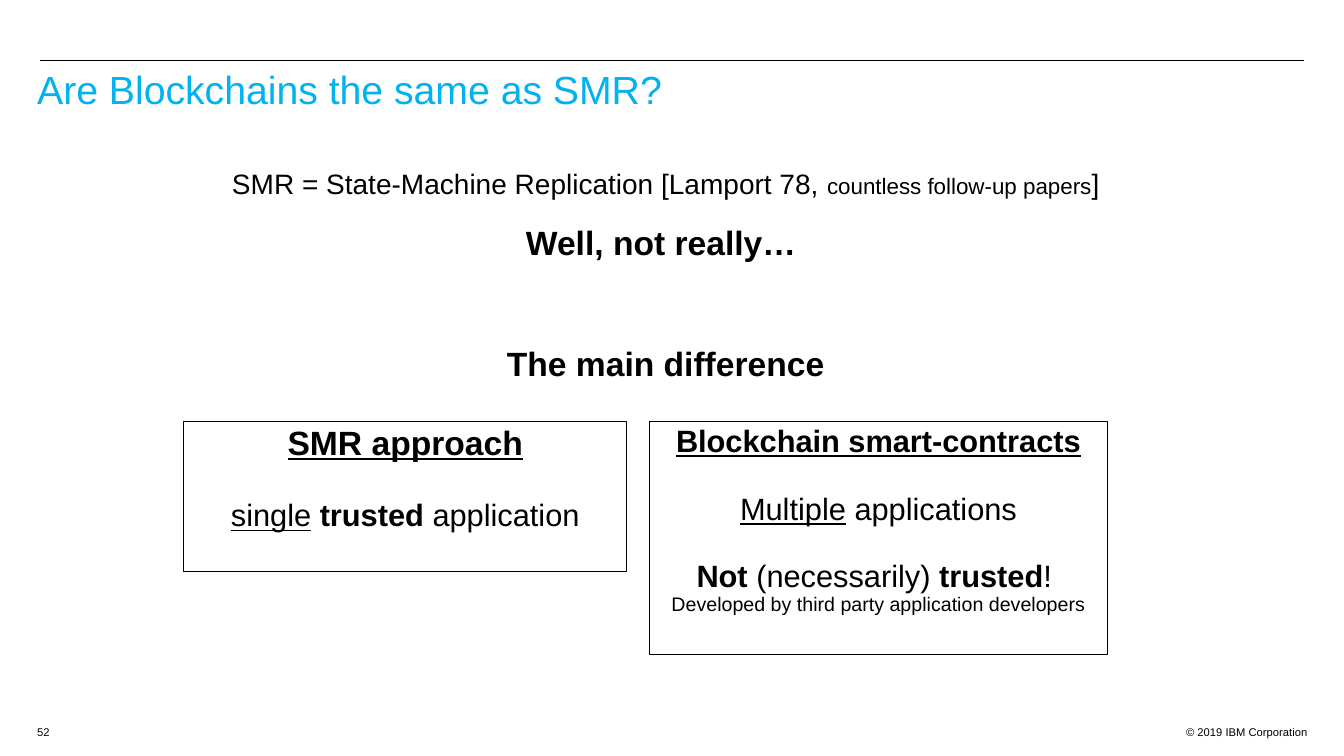
from dataclasses import dataclass

from lxml import etree
from pptx import Presentation
from pptx import util as u
from pptx.dml.color import RGBColor
from pptx.enum import shapes, text
from pptx.oxml import ns

INK = {"black": "000000", "cyan": "00B2EF"}
FONT = "Arial"
EDGE = 0.75
ALIGN = text.PP_ALIGN

# The slide is a grid of 100 columns by 100 rows.
WIDE, HIGH = u.Inches(13.33), u.Inches(7.5)
LEFT, SPAN = 2.03, 95
FOOT, TOP = 95.33, 55.73


@dataclass
class Run:
    words: str
    size: float
    bold: bool = False
    under: bool = False
    ink: str = "black"


@dataclass
class Para:
    runs: list[Run]
    align: ALIGN = ALIGN.CENTER
    before: float = 0
    after: float = 0
    lead: float = 1


@dataclass
class Box:
    col: float
    row: float
    cols: float
    rows: float
    paras: list[Para]
    framed: bool = False


def across(cols: float) -> int:
    return round(WIDE * cols / 100)


def down(rows: float) -> int:
    return round(HIGH * rows / 100)


def body(runs: list[Run], before: float = 0) -> Para:
    return Para(runs, before=before, after=2)


def tight(runs: list[Run], before: float = 0) -> Para:
    return Para(runs, before=before, lead=0.9)


TITLE = Box(LEFT, 8.67, SPAN, 10.67, [
    Para([Run("Are Blockchains the same as SMR?", 28, ink="cyan")],
         ALIGN.LEFT, lead=0.9)])

BODY = Box(LEFT, 21.33, SPAN, 71.33, [
    body([Run("SMR = State-Machine Replication [Lamport 78, ", 20),
          Run("countless follow-up papers", 16),
          Run("]", 20)]),
    body([Run("Well, not really… ", 24, bold=True)], 13.5),
    body([Run("The main difference", 24, bold=True)], 56)])

SMR = Box(13.65, TOP, 33, 19.87, [
    tight([Run("SMR approach", 24, bold=True, under=True)]),
    tight([Run("single", 22, under=True),
           Run(" ", 22),
           Run("trusted", 22, bold=True),
           Run(" application", 22)], 27)], framed=True)

CHAIN = Box(48.3, TOP, 34.13, 30.8, [
    tight([Run("Blockchain smart-contracts", 22, bold=True, under=True)]),
    tight([Run("Multiple", 22, under=True),
           Run(" applications", 22)], 24.5),
    tight([Run("Not", 22, bold=True),
           Run(" (necessarily) ", 22),
           Run("trusted", 22, bold=True),
           Run("! ", 22)], 24.5),
    tight([Run("Developed by third party application developers", 14)])],
    framed=True)

RIGHTS = Box(83.03, FOOT, 15, 2.67, [
    Para([Run("© 2019 IBM Corporation", 8)], ALIGN.RIGHT)])
PAGE = Box(LEFT, FOOT, 4, 2.67, [Para([Run("52", 8)], ALIGN.LEFT)])


def color(name: str) -> RGBColor:
    return RGBColor.from_string(INK[name])


def write(frame, paras: list[Para]) -> None:
    frame.word_wrap = True
    frame.vertical_anchor = text.MSO_ANCHOR.TOP
    for i, para in enumerate(paras):
        line = frame.add_paragraph() if i else frame.paragraphs[0]
        line.alignment = para.align
        line.line_spacing = para.lead
        line.space_before = u.Pt(para.before)
        line.space_after = u.Pt(para.after)
        for run in para.runs:
            part = line.add_run()
            part.text = run.words
            font = part.font
            font.name, font.size = FONT, u.Pt(run.size)
            font.bold, font.underline = run.bold, run.under
            font.color.rgb = color(run.ink)


def draw(slide, box: Box) -> None:
    place = (across(box.col), down(box.row), across(box.cols), down(box.rows))
    if box.framed:
        shape = slide.shapes.add_shape(shapes.MSO_SHAPE.RECTANGLE, *place)
        shape.shadow.inherit = False
        shape.fill.background()
        shape.line.color.rgb = color("black")
        shape.line.width = u.Pt(EDGE)
    else:
        shape = slide.shapes.add_textbox(*place)
    write(shape.text_frame, box.paras)


def rule(slide, col: float, end: float, row: float) -> None:
    """Draw a level line between two columns."""
    line = slide.shapes.add_connector(
        shapes.MSO_CONNECTOR.STRAIGHT,
        across(col), down(row), across(end), down(row))
    line.line.color.rgb = color("black")
    line.line.width = u.Pt(EDGE)
    etree.SubElement(line._element.spPr, ns.qn("a:effectLst"))


def main() -> None:
    deck = Presentation()
    deck.slide_width, deck.slide_height = WIDE, HIGH
    slide = deck.slides.add_slide(deck.slide_layouts[6])
    rule(slide, 3, 97, 8)
    for box in (RIGHTS, TITLE, BODY, PAGE, SMR, CHAIN):
        draw(slide, box)
    deck.save("out.pptx")


if __name__ == "__main__":
    main()
